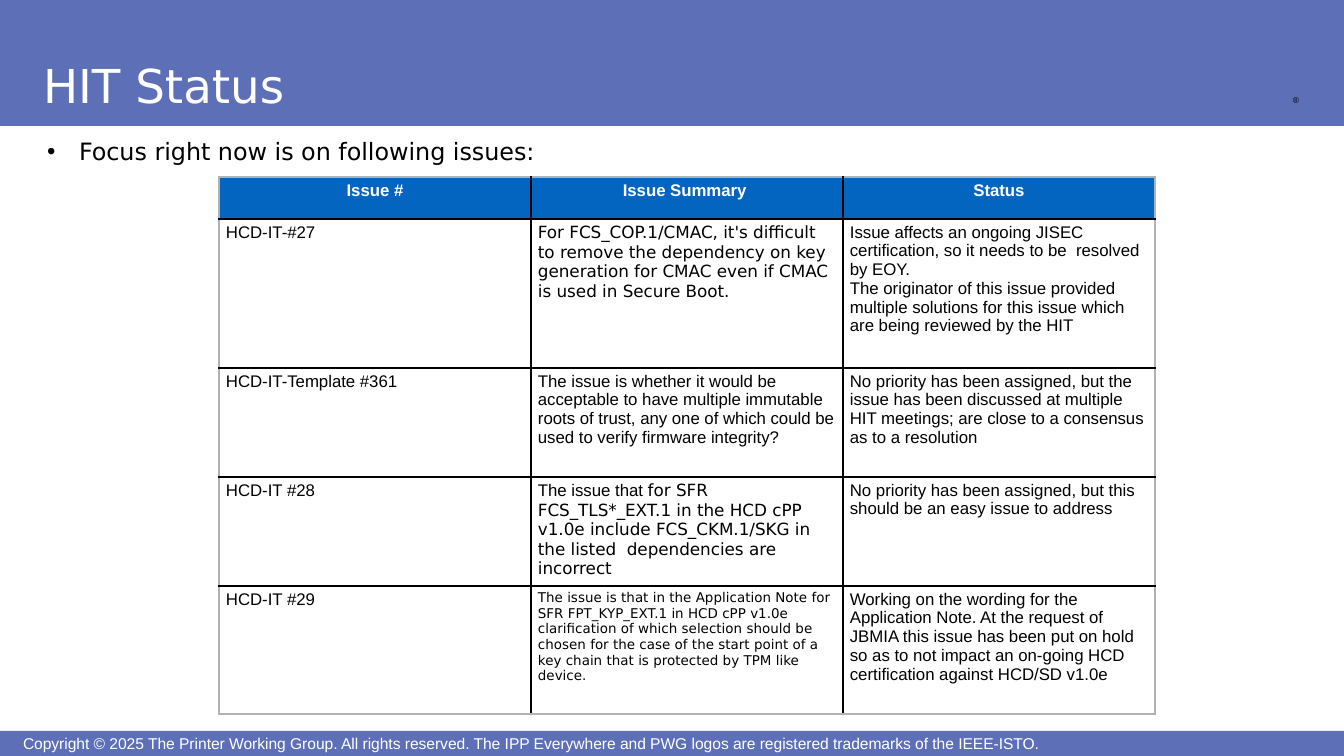
from lxml import etree
from pptx import Presentation
from pptx.dml.color import RGBColor
from pptx.enum import shapes, text
from pptx.oxml import ns
from pptx.util import Emu, Pt

SCALE = 914400 / 121  # EMU in one px
WIDTH, HEIGHT = 1344, 756
COLOURS = {"band": "5D6FB7", "header": "0365C0", "light": "FFFFFF",
           "ink": "000000", "frame": "B2B2B2"}
SANS, WIDE = "Arial", "DejaVu Sans"

HEADINGS = ["Issue #", "Issue Summary ", "Status"]
# Each cell is a list of paragraphs; a paragraph is a list of (text, font, size).
ISSUES = [
    [
        [[("HCD-IT-#27", SANS, 10)]],
        [[("For FCS_COP.1/CMAC, it's difficult to remove the dependency on key "
           "generation for CMAC even if CMAC is used in Secure Boot.", WIDE, 10)]],
        [[("Issue affects an ongoing JISEC certification, so it needs to be  "
           "resolved by EOY.", SANS, 10)],
         [("The originator of this issue provided multiple solutions for this issue "
           "which are being reviewed by the HIT", SANS, 10)]],
    ],
    [
        [[("HCD-IT-Template #361", SANS, 10)]],
        [[("The issue is whether it would be acceptable to have multiple immutable "
           "roots of trust, any one of which could be used to verify firmware "
           "integrity?", SANS, 10)]],
        [[("No priority has been assigned, but the issue has been discussed at "
           "multiple HIT meetings; are close to a consensus as to a resolution",
           SANS, 10)]],
    ],
    [
        [[("HCD-IT #28", SANS, 10)]],
        [[("The issue that ", SANS, 10),
          ("for SFR FCS_TLS*_EXT.1 in the HCD cPP v1.0e include FCS_CKM.1/SKG in "
           "the listed  dependencies are incorrect", WIDE, 10)]],
        [[("No priority has been assigned, but this should be an easy issue to "
           "address", SANS, 10)]],
    ],
    [
        [[("HCD-IT #29", SANS, 10)]],
        [[("The issue is that in the Application Note for SFR FPT_KYP_EXT.1 in HCD "
           "cPP v1.0e", WIDE, 8)],
         [("clarification of which selection should be chosen for the case of the "
           "start point of a key chain that is protected by TPM like device.",
           WIDE, 8)]],
        [[("Working on the wording for the Application Note. At the request of JBMIA "
           "this issue has been put on hold so as to not impact an on-going HCD "
           "certification against HCD/SD v1.0e", SANS, 10)]],
    ],
]
ROW_HEIGHTS = [42, 149, 109, 109, 128]
COLUMN_WIDTH = 312


def px(length):
    return Emu(round(length * SCALE))


def colour(name):
    return RGBColor.from_string(COLOURS[name])


def place(shape, left, top, width, height):
    shape.left, shape.top = px(left), px(top)
    shape.width, shape.height = px(width), px(height)


def set_margins(target, left, top, right, bottom):
    target.margin_left, target.margin_top = px(left), px(top)
    target.margin_right, target.margin_bottom = px(right), px(bottom)


def write(para, content, font=SANS, size=10, ink="ink", bold=False, align=None,
          indent=0, bullet=None):
    """Add a run; indent is in px and hangs when there is a bullet."""
    if indent:
        properties = para._p.get_or_add_pPr()
        properties.set("marL", str(px(indent)))
        properties.set("indent", str(px(-indent if bullet else 0)))
    if bullet:
        etree.SubElement(properties, ns.qn("a:buFont")).set("typeface", SANS)
        etree.SubElement(properties, ns.qn("a:buChar")).set("char", bullet)
    if align is not None:
        para.alignment = align
    span = para.add_run()
    span.text = content
    span.font.name, span.font.size, span.font.bold = font, Pt(size), bold
    span.font.color.rgb = colour(ink)


def add_band(page, top, height):
    band = page.shapes.add_shape(shapes.MSO_SHAPE.RECTANGLE,
                                 0, px(top), px(WIDTH), px(height))
    band.shadow.inherit = False
    band.fill.solid()
    band.fill.fore_color.rgb = colour("band")
    band.line.fill.background()


def add_text(page, bounds, content, margins=(0, 0, 0, 0), wrap=True,
             anchor=text.MSO_ANCHOR.TOP, **style):
    box = page.shapes.add_textbox(*map(px, bounds))
    frame = box.text_frame
    frame.word_wrap = wrap
    frame.vertical_anchor = anchor
    set_margins(frame, *margins)
    write(frame.paragraphs[0], content, **style)
    return frame.paragraphs[0]


def set_title(page, content):
    title = page.shapes.title
    title.element.getparent().append(title.element)  # in front of the band
    place(title, 31, 7, 807, 113)
    frame = title.text_frame
    frame.word_wrap = True
    frame.vertical_anchor = text.MSO_ANCHOR.BOTTOM
    set_margins(frame, 7, 7, 15, 7)
    write(frame.paragraphs[0], content, font=WIDE, size=27.8, ink="light",
          align=text.PP_ALIGN.LEFT, indent=5)


def set_borders(cell, edges):
    """Draw 1 pt borders; edges maps L, R, T and B to colour names."""
    properties = cell._tc.get_or_add_tcPr()
    for position, side in enumerate("LRTB"):
        line = etree.Element(ns.qn(f"a:ln{side}"), w=str(Pt(1)))
        fill = etree.SubElement(line, ns.qn("a:solidFill"))
        etree.SubElement(fill, ns.qn("a:srgbClr")).set("val", COLOURS[edges[side]])
        properties.insert(position, line)


def add_issue_table(page):
    header = [[[(heading, SANS, 10)]] for heading in HEADINGS]
    rows = [header] + ISSUES
    last_row, last_column = len(rows) - 1, len(HEADINGS) - 1
    table = page.shapes.add_table(
        len(rows), len(HEADINGS), px(219), px(177),
        px(COLUMN_WIDTH * len(HEADINGS)), px(sum(ROW_HEIGHTS))).table
    for column in table.columns:
        column.width = px(COLUMN_WIDTH)
    for i, (row, height) in enumerate(zip(rows, ROW_HEIGHTS)):
        table.rows[i].height = px(height)
        for j, paragraphs in enumerate(row):
            cell = table.cell(i, j)
            set_margins(cell, 7, 4, 7, 4)
            if i == 0:
                cell.fill.solid()
                cell.fill.fore_color.rgb = colour("header")
                style = dict(ink="light", bold=True, align=text.PP_ALIGN.CENTER)
            else:
                cell.fill.background()
                style = {}
            outer = {"L": j == 0, "R": j == last_column,
                     "T": i == 0, "B": i == last_row}
            set_borders(cell, {side: "frame" if edge else "ink"
                               for side, edge in outer.items()})
            frame = cell.text_frame
            for k, spans in enumerate(paragraphs):
                para = frame.add_paragraph() if k else frame.paragraphs[0]
                for content, font, size in spans:
                    write(para, content, font=font, size=size, **style)


def main():
    deck = Presentation()
    deck.slide_width, deck.slide_height = px(WIDTH), px(HEIGHT)
    page = deck.slides.add_slide(deck.slide_layouts[5])
    add_band(page, 731, 25)
    add_band(page, 0, 126)
    add_text(page, (18, 733, 1257, 20),
             "Copyright © 2025 The Printer Working Group. All rights reserved. "
             "The IPP Everywhere and PWG logos are registered trademarks of the "
             "IEEE-ISTO.", anchor=text.MSO_ANCHOR.MIDDLE, size=9.3, ink="light",
             indent=5)
    add_text(page, (1280, 90, 33, 22), "®", margins=(6, 6, 6, 6), wrap=False,
             size=5, indent=7)
    set_title(page, "HIT Status")
    focus = add_text(page, (40, 130, 975, 568),
                     "Focus right now is on following issues:",
                     margins=(7, 7, 15, 7), font=WIDE, size=14.2, indent=32,
                     bullet="•")
    focus.space_after = Pt(5)
    add_issue_table(page)
    deck.save("out.pptx")


if __name__ == "__main__":
    main()
